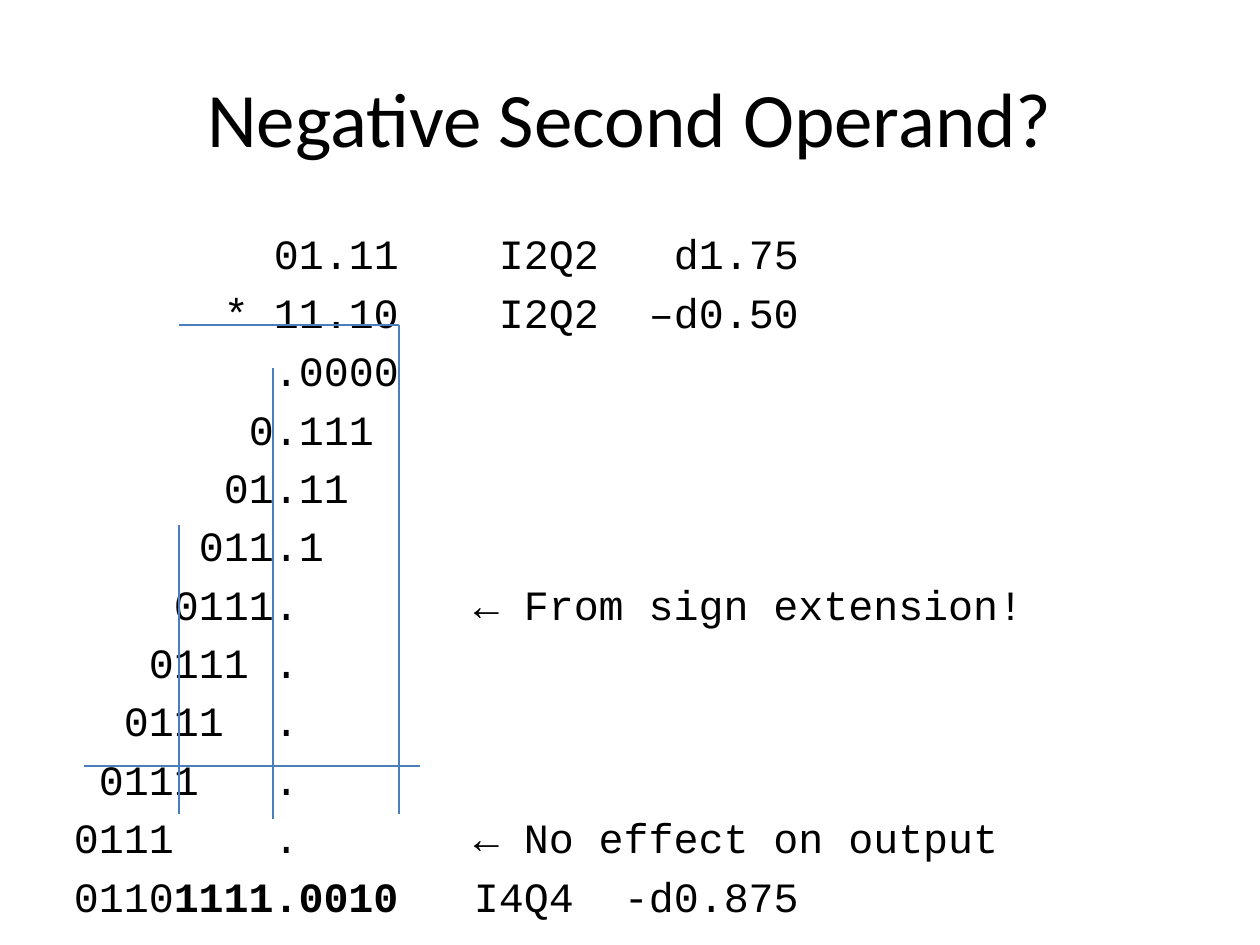
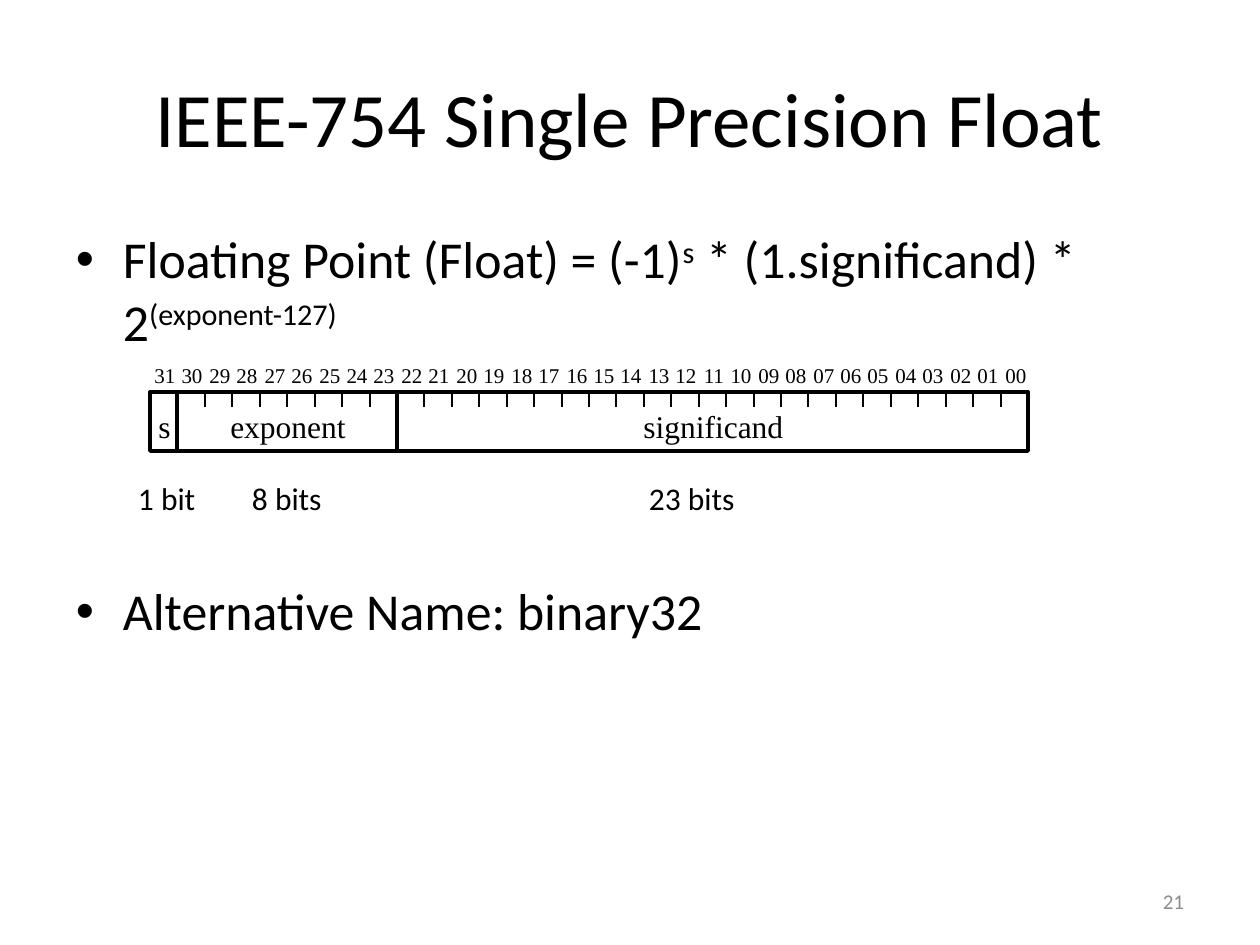
from lxml.etree import SubElement
from pptx import Presentation
from pptx.dml.color import RGBColor
from pptx.enum.shapes import MSO_CONNECTOR, MSO_SHAPE
from pptx.enum.text import MSO_ANCHOR, PP_ALIGN
from pptx.oxml.ns import qn
from pptx.util import Emu, Pt

PX = 914400 // 126
BLACK, WHITE, BLUE, GRAY = "000000", "FFFFFF", "4B7EBC", "8C8C8C"
SANS, MONO, SERIF = "Calibri", "Courier New", "Times New Roman"
LEFT, CENTER, RIGHT = PP_ALIGN.LEFT, PP_ALIGN.CENTER, PP_ALIGN.RIGHT
TOP, MIDDLE = MSO_ANCHOR.TOP, MSO_ANCHOR.MIDDLE


def px(n):
    """Turn pixels into EMU."""
    return Emu(round(n) * PX)


def color(value):
    """Turn a hex string into a colour."""
    return RGBColor.from_string(value)


def add_run(p, text, size=18, font=SANS, fill=BLACK, bold=False, raised=False):
    """Add one formatted run to a paragraph."""
    r = p.add_run()
    r.text = text
    r.font.size, r.font.name, r.font.bold = Pt(size), font, bold
    r.font.color.rgb = color(fill)
    if raised:
        r.font._element.set("baseline", "30000")


def set_tabs(p, stops):
    """Give a paragraph left tab stops, in pixels."""
    tabs = SubElement(p._p.get_or_add_pPr(), qn("a:tabLst"))
    for stop in stops:
        SubElement(tabs, qn("a:tab"), pos=str(px(stop)), algn="l")


def set_bullet(p, indent):
    """Give a paragraph a hanging round bullet."""
    pPr = p._p.get_or_add_pPr()
    pPr.set("marL", str(px(indent)))
    pPr.set("indent", str(-px(indent)))
    SubElement(pPr, qn("a:buFont"), typeface="Arial")
    SubElement(pPr, qn("a:buChar"), char="•")


class Deck:
    """Hold the shared style and the current slide."""

    def __init__(self):
        """Start an empty 10 by 7.5 inch deck."""
        self.prs = Presentation()
        self.prs.slide_width, self.prs.slide_height = px(1260), px(945)

    def slide(self, title):
        """Start a slide with the shared title."""
        self.s = self.prs.slides.add_slide(self.prs.slide_layouts[6])
        self.text(title, 63, 38, 1134, 157, size=44, align=CENTER, anchor=MIDDLE)

    def frame(self, x, y, w, h, anchor=TOP, inset=13):
        """Add an empty wrapping text box and return its text frame."""
        tf = self.s.shapes.add_textbox(px(x), px(y), px(w), px(h)).text_frame
        tf.word_wrap, tf.vertical_anchor = True, anchor
        tf.margin_left = tf.margin_right = px(inset)
        return tf

    def text(self, text, x, y, w, h, align=LEFT, anchor=TOP, inset=13, **style):
        """Add a one-paragraph text and return the paragraph."""
        p = self.frame(x, y, w, h, anchor, inset).paragraphs[0]
        p.alignment = align
        add_run(p, text, **style)
        return p

    def line(self, x1, y1, x2, y2, fill=BLACK, width=1):
        """Add a straight line."""
        c = self.s.shapes.add_connector(MSO_CONNECTOR.STRAIGHT, px(x1), px(y1), px(x2), px(y2))
        c.line.color.rgb, c.line.width = color(fill), Pt(width)
        SubElement(c._element.spPr, qn("a:effectLst"))

    def rect(self, x, y, w, h, width):
        """Add a white rectangle with a black outline."""
        sp = self.s.shapes.add_shape(MSO_SHAPE.RECTANGLE, px(x), px(y), px(w), px(h))
        sp.shadow.inherit = False
        sp.fill.solid()
        sp.fill.fore_color.rgb = color(WHITE)
        sp.line.color.rgb, sp.line.width = color(BLACK), Pt(width)

    def columns(self, rows, x, y, w, h, pitch, space, **style):
        """Add rows of (column, text, bold) pieces on a character grid."""
        tf = self.frame(x, y, w, h)
        for i, row in enumerate(rows):
            p = tf.add_paragraph() if i else tf.paragraphs[0]
            p.space_before = Pt(space)
            set_tabs(p, [col * pitch for col, *_ in row if col])
            for col, text, *bold in row:
                add_run(p, "\t" + text if col else text, bold=bool(bold), **style)

    def bullets(self, items, x, y, w, h, size):
        """Add bullets, each a space before and (text, raised) pieces."""
        tf = self.frame(x, y, w, h)
        for i, (space, pieces) in enumerate(items):
            p = tf.add_paragraph() if i else tf.paragraphs[0]
            p.space_before = Pt(space)
            set_bullet(p, 47)
            for text, raised in pieces:
                add_run(p, text, size=size, raised=raised)


def multiplication(deck):
    """Build the slide that multiplies by a negative operand."""
    deck.slide("Negative Second Operand?")
    rows = [
        [(8, "01.11"), (17, "I2Q2"), (24, "d1.75")],
        [(6, "* 11.10"), (17, "I2Q2"), (23, "–d0.50")],
        [(8, ".0000")],
        [(7, "0.111")],
        [(6, "01.11")],
        [(5, "011.1")],
        [(4, "0111."), (16, "← From sign extension!")],
        [(3, "0111 .")],
        [(2, "0111"), (8, ".")],
        [(1, "0111"), (8, ".")],
        [(0, "0111"), (8, "."), (16, "← No effect on output")],
        [(0, "0110"), (0, "1111.0010", True), (16, "I4Q4"), (22, "-d0.875")],
    ]
    deck.columns(rows, 61, 222, 1135, 624, pitch=25, space=4.8, size=23.8, font=MONO)
    for ends in [(179, 325, 399, 325), (84, 766, 420, 766), (273, 368, 273, 819),
                 (179, 525, 179, 814), (399, 325, 399, 814)]:
        deck.line(*ends, fill=BLUE, width=0.75)


def single_float(deck):
    """Build the slide that shows the single precision layout."""
    deck.slide("IEEE-754 Single Precision Float")
    deck.text("21", 903, 876, 294, 50, align=RIGHT, anchor=MIDDLE, size=12, fill=GRAY)
    formula = [("Floating Point (Float) = (-1)", False), ("s", True),
               (" * (1.significand) * 2", False), ("(exponent-127)", True)]
    deck.bullets([(5, formula), (130, [("Alternative Name: binary32", False)])],
                 63, 221, 1134, 624, size=29.6)

    left, top, width, height, bits = 150, 392, 878, 59, 32
    edges = [left + width * i / bits for i in range(bits + 1)]
    deck.rect(left, top, width, height, 2.25)
    for i, x in enumerate(edges):
        deck.line(x, top, x, top + 15)
        if i < bits:
            deck.text(f"{bits - 1 - i:02}", x - 9, 356, 48, 38, align=CENTER,
                      anchor=MIDDLE, inset=0, size=12, font=SERIF)
    for name, first, last in [("s", 0, 1), ("exponent", 1, 9), ("significand", 9, 32)]:
        x = edges[first]
        deck.text(name, x + 1, 401, edges[last] - x, 50, align=CENTER, anchor=MIDDLE,
                  inset=0, size=18, font=SERIF)
        if first:
            deck.line(x, top, x, top + height, width=2.25)
    set_tabs(deck.text("1 bit\t8 bits\t23 bits", 125, 473, 634, 50), [114, 511])


def main():
    """Build and save the deck."""
    deck = Deck()
    multiplication(deck)
    single_float(deck)
    deck.prs.save("out.pptx")


if __name__ == "__main__":
    main()
